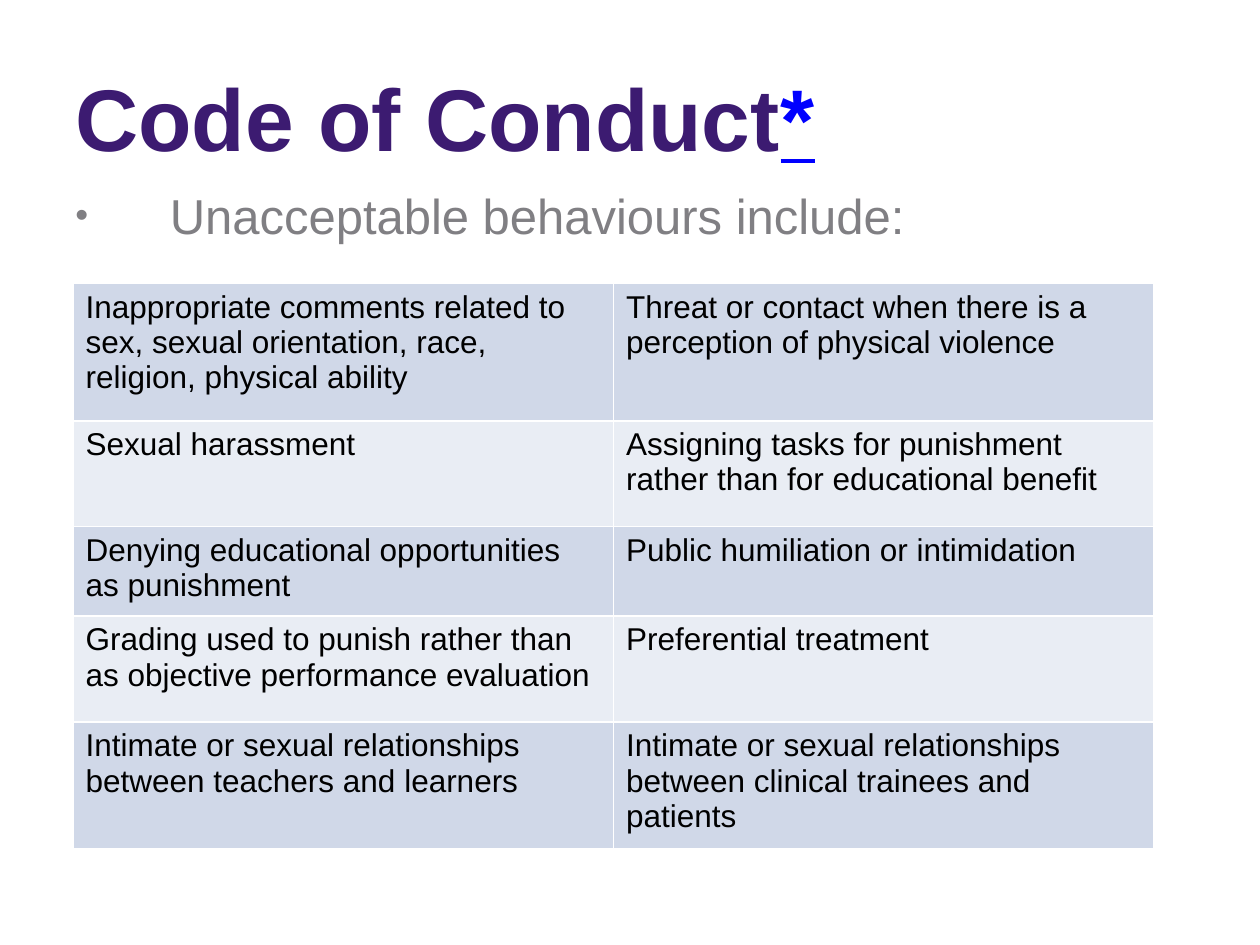
from lxml import etree
from pptx import Presentation
from pptx.dml.color import RGBColor
from pptx.enum.text import MSO_ANCHOR
from pptx.oxml.ns import qn
from pptx.util import Inches, Pt

MIDDLE = MSO_ANCHOR.MIDDLE
FONT = "Arial"
COLORS = {
    "title": "3C1B71",
    "link": "0000FF",
    "lead": "807F83",
    "text": "000000",
    "dark_band": "D0D8E8",
    "light_band": "E9EDF4",
    "border": "FFFFFF",
}
BEHAVIOURS = [
    ("Inappropriate comments related to sex, sexual orientation, race, religion, physical ability",
     "Threat or contact when there is a perception of physical violence"),
    ("Sexual harassment",
     "Assigning tasks for punishment rather than for educational benefit"),
    ("Denying educational opportunities as punishment",
     "Public humiliation or intimidation"),
    ("Grading used to punish rather than as objective performance evaluation",
     "Preferential treatment"),
    ("Intimate or sexual relationships between teachers and learners",
     "Intimate or sexual relationships between clinical trainees and patients"),
]
ROW_HEIGHTS = [1.09, 0.84, 0.71, 0.84, 1.01]


def style(font, size, color):
    font.name = FONT
    font.size = Pt(size)
    font.color.rgb = RGBColor.from_string(COLORS[color])


def add_borders(cell):
    properties = cell._tc.get_or_add_tcPr()
    for position, side in enumerate(("a:lnL", "a:lnR", "a:lnT", "a:lnB")):
        line = etree.Element(qn(side), w=str(Pt(1)))
        fill = etree.SubElement(line, qn("a:solidFill"))
        etree.SubElement(fill, qn("a:srgbClr"), val=COLORS["border"])
        properties.insert(position, line)


prs = Presentation()
prs.slide_width = Inches(10)
prs.slide_height = Inches(7.5)
slide = prs.slides.add_slide(prs.slide_layouts[6])

title = slide.shapes.add_textbox(Inches(0.5), Inches(0.3), Inches(9), Inches(1.25)).text_frame
title.word_wrap = True
title.vertical_anchor = MIDDLE
heading = title.paragraphs[0]
heading.space_after = Pt(12)
heading.font.bold = True
for words, color in (("Code of Conduct", "title"), ("*", "link")):
    run = heading.add_run()
    run.text = words
    style(run.font, 50, color)
    run.font.underline = color == "link"

body = slide.shapes.add_textbox(Inches(0.5), Inches(1.42), Inches(8.5), Inches(5.28)).text_frame
body.word_wrap = True
lead = body.paragraphs[0]
lead.text = "Unacceptable behaviours include:"
lead.space_after = Pt(24)
lead_properties = lead._p.get_or_add_pPr()
lead_properties.set("marL", str(Inches(0.75)))
lead_properties.set("indent", str(Inches(-0.75)))
etree.SubElement(lead_properties, qn("a:buSzPct"), val="75000")
etree.SubElement(lead_properties, qn("a:buFont"), typeface=FONT)
etree.SubElement(lead_properties, qn("a:buChar"), char="•")
style(lead.font, 28, "lead")

table = slide.shapes.add_table(
    len(BEHAVIOURS), 2, Inches(0.58), Inches(2.25), Inches(8.58), Inches(sum(ROW_HEIGHTS))
).table
table.first_row = False
for column in table.columns:
    column.width = Inches(4.29)
for index, (height, behaviours) in enumerate(zip(ROW_HEIGHTS, BEHAVIOURS)):
    table.rows[index].height = Inches(height)
    band = "light_band" if index % 2 else "dark_band"
    for cell, behaviour in zip(table.rows[index].cells, behaviours):
        cell.text = behaviour
        style(cell.text_frame.paragraphs[0].font, 18, "text")
        cell.fill.solid()
        cell.fill.fore_color.rgb = RGBColor.from_string(COLORS[band])
        add_borders(cell)

prs.save("out.pptx")
